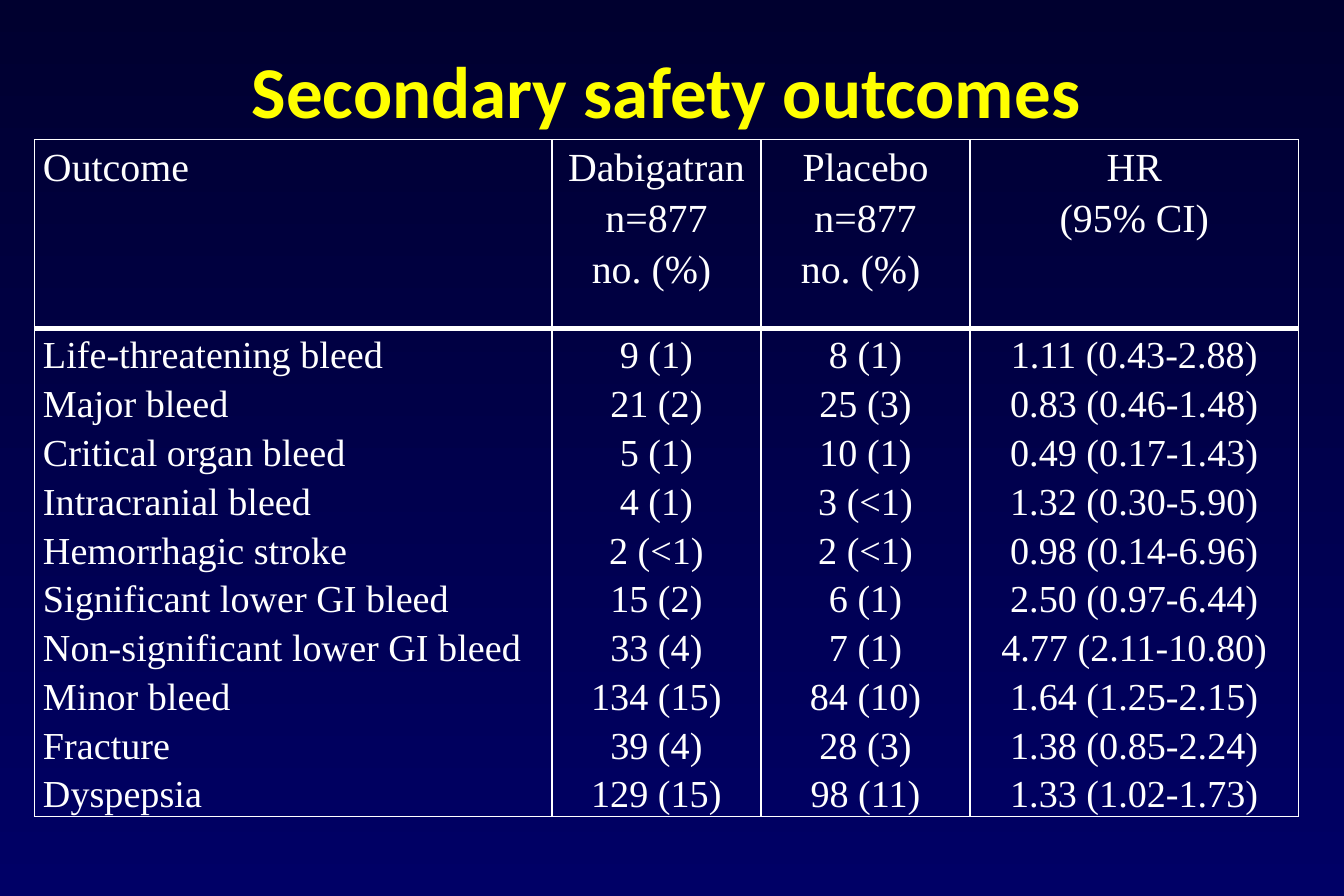
from pptx import Presentation
from pptx.dml.color import RGBColor
from pptx.enum.text import MSO_ANCHOR, PP_ALIGN
from pptx.oxml.ns import qn
from pptx.util import Inches, Pt
from lxml.etree import SubElement

COLORS = {"top": "00002F", "bottom": "000066", "title": "FFFF00", "text": "FFFFFF", "rule": "FFFFFF"}

HEADINGS = [
    "Outcome",
    "Dabigatran\nn=877\nno. (%) ",
    "Placebo\nn=877\nno. (%) ",
    "HR\n(95% CI)",
]
OUTCOMES = [
    ("Life-threatening bleed", "9 (1)", "8 (1)", "1.11 (0.43-2.88)"),
    ("Major bleed", "21 (2)", "25 (3)", "0.83 (0.46-1.48)"),
    ("Critical organ bleed", "5 (1)", "10 (1)", "0.49 (0.17-1.43)"),
    ("Intracranial bleed", "4 (1)", "3 (<1)", "1.32 (0.30-5.90)"),
    ("Hemorrhagic stroke", "2 (<1)", "2 (<1)", "0.98 (0.14-6.96)"),
    ("Significant lower GI bleed", "15 (2)", "6 (1)", "2.50 (0.97-6.44)"),
    ("Non-significant lower GI bleed", "33 (4)", "7 (1)", "4.77 (2.11-10.80)"),
    ("Minor bleed", "134 (15)", "84 (10)", "1.64 (1.25-2.15)"),
    ("Fracture", "39 (4)", "28 (3)", "1.38 (0.85-2.24)"),
    ("Dyspepsia", "129 (15)", "98 (11)", "1.33 (1.02-1.73)"),
]
COLUMN_WIDTHS = [4.33, 1.75, 1.75, 2.75]
ROW_HEIGHTS = [1.58, 3.61]
TEXT_SIZES = [24, 23]
# Border widths in points for the heading row and the outcome row
BORDERS = [
    {"a:lnL": 1, "a:lnR": 1, "a:lnT": 1, "a:lnB": 3},
    {"a:lnL": 1, "a:lnR": 1, "a:lnT": 3, "a:lnB": 1},
]
CELL_FORMAT = {
    "margin_left": Inches(0.07), "margin_right": Inches(0.07),
    "margin_top": 0, "margin_bottom": 0, "vertical_anchor": MSO_ANCHOR.TOP,
}


def set_format(target, values):
    for name, value in values.items():
        setattr(target, name, value)


def add_borders(cell, widths):
    properties = cell._tc.get_or_add_tcPr()
    for side, points in widths.items():
        line = SubElement(properties, qn(side), w=str(Pt(points)))
        solid = SubElement(line, qn("a:solidFill"))
        SubElement(solid, qn("a:srgbClr"), val=COLORS["rule"])


presentation = Presentation()
set_format(presentation, {"slide_width": Inches(11.25), "slide_height": Inches(7.5)})
slide = presentation.slides.add_slide(presentation.slide_layouts[5])

# Background
backdrop = slide.background.fill
backdrop.gradient()
backdrop.gradient_angle = 270
for stop, shade in zip(backdrop.gradient_stops, ("top", "bottom")):
    stop.color.rgb = RGBColor.from_string(COLORS[shade])

# Title
title = slide.shapes.title
set_format(title, {"left": Inches(0.8), "top": Inches(0.25), "width": Inches(9.56), "height": Inches(1)})
title.text_frame.text = "Secondary safety outcomes"
title.text_frame.vertical_anchor = MSO_ANCHOR.MIDDLE
heading = title.text_frame.paragraphs[0]
heading.alignment = PP_ALIGN.CENTER
heading_font = heading.runs[0].font
set_format(heading_font, {"name": "Calibri", "size": Pt(44), "bold": True})
heading_font.color.rgb = RGBColor.from_string(COLORS["title"])

# Outcome table: one heading row, one row that stacks all outcomes
results = slide.shapes.add_table(
    2, 4, Inches(0.29), Inches(1.17), Inches(sum(COLUMN_WIDTHS)), Inches(sum(ROW_HEIGHTS))
).table
set_format(results, {"first_row": False, "horz_banding": False})
for column, width in zip(results.columns, COLUMN_WIDTHS):
    column.width = Inches(width)
for row, height in zip(results.rows, ROW_HEIGHTS):
    row.height = Inches(height)

stacked = ["\n".join(values) for values in zip(*OUTCOMES)]
for row_index, texts in enumerate([HEADINGS, stacked]):
    for column_index, text in enumerate(texts):
        cell = results.cell(row_index, column_index)
        cell.text = text
        set_format(cell, CELL_FORMAT)
        add_borders(cell, BORDERS[row_index])
        cell.fill.background()
        for paragraph in cell.text_frame.paragraphs:
            paragraph.line_spacing = 1.15
            paragraph.alignment = PP_ALIGN.CENTER if column_index else PP_ALIGN.LEFT
            font = paragraph.runs[0].font
            set_format(font, {"name": "Times New Roman", "size": Pt(TEXT_SIZES[row_index]), "bold": False})
            font.color.rgb = RGBColor.from_string(COLORS["text"])

presentation.save("out.pptx")
